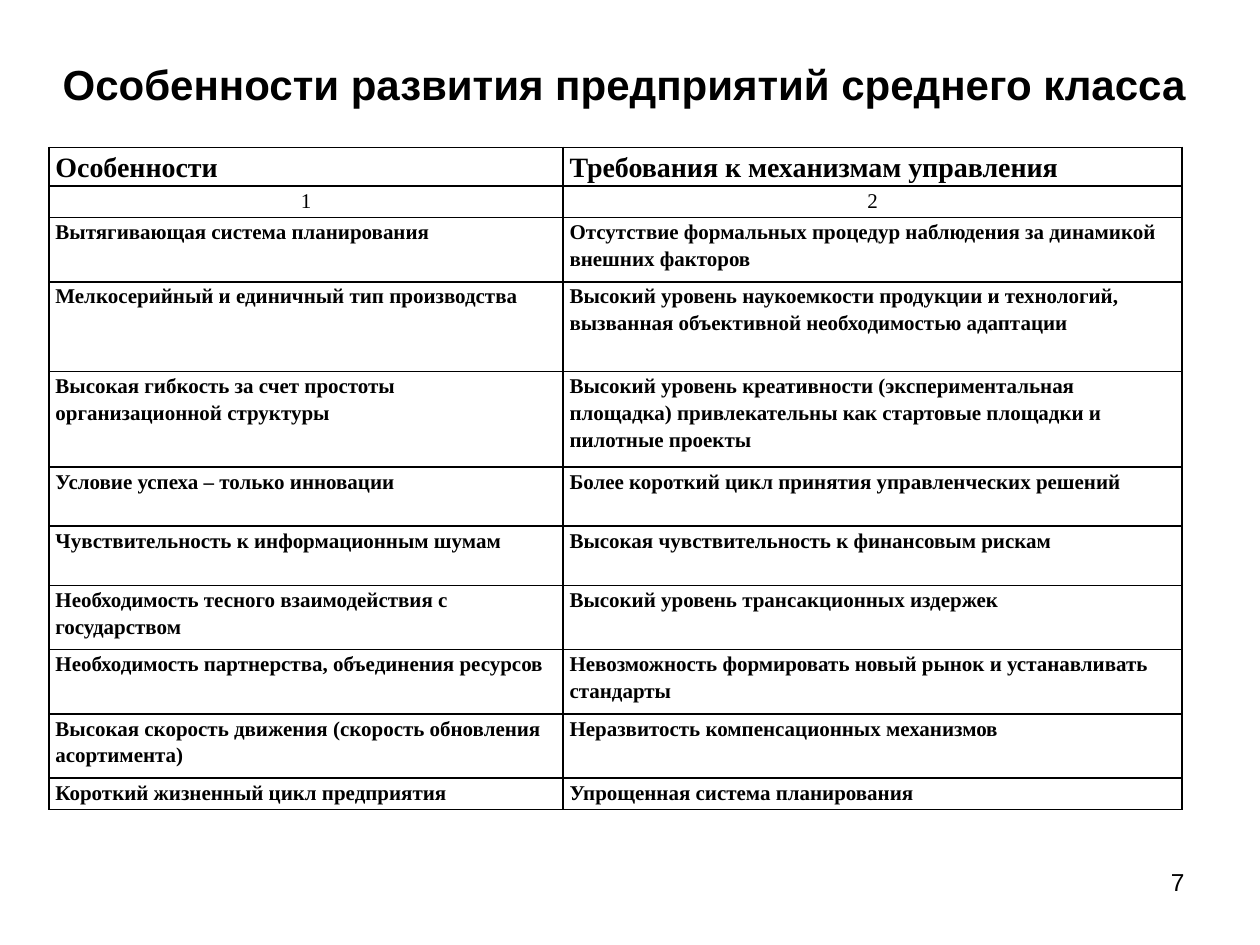
from lxml import etree
from pptx import Presentation
from pptx.dml.color import RGBColor
from pptx.enum.text import MSO_ANCHOR, PP_ALIGN
from pptx.oxml.ns import qn
from pptx.util import Inches, Pt

LEFT, CENTER, RIGHT = PP_ALIGN.LEFT, PP_ALIGN.CENTER, PP_ALIGN.RIGHT
TOP, MIDDLE = MSO_ANCHOR.TOP, MSO_ANCHOR.MIDDLE
TITLE_ONLY = 5

HEADING = "Особенности развития предприятий среднего класса"
COLUMN_WIDTHS = (4.08, 4.91)
# Row height, feature, requirement
ROWS = [
    (0.25, "Особенности", "Требования к механизмам управления"),
    (0.25, "1", "2"),
    (0.51, "Вытягивающая система планирования",
     "Отсутствие формальных процедур наблюдения за динамикой внешних факторов"),
    (0.71, "Мелкосерийный и единичный тип производства",
     "Высокий уровень наукоемкости продукции и технологий, "
     "вызванная объективной необходимостью адаптации"),
    (0.76, "Высокая гибкость за счет простоты организационной структуры",
     "Высокий уровень креативности (экспериментальная площадка) "
     "привлекательны как стартовые площадки и пилотные проекты"),
    (0.47, "Условие успеха – только инновации",
     "Более короткий цикл принятия управленческих решений"),
    (0.47, "Чувствительность к информационным шумам",
     "Высокая чувствительность к финансовым рискам"),
    (0.51, "Необходимость тесного взаимодействия с государством",
     "Высокий уровень трансакционных издержек"),
    (0.51, "Необходимость партнерства, объединения ресурсов",
     "Невозможность формировать новый рынок и устанавливать стандарты"),
    (0.51, "Высокая скорость движения (скорость обновления асортимента)",
     "Неразвитость компенсационных механизмов"),
    (0.25, "Короткий жизненный цикл предприятия",
     "Упрощенная система планирования"),
]


def rgb(value):
    return RGBColor.from_string(value)


class SlideBuilder:
    ink, paper = "000000", "FFFFFF"
    sans, serif = "Arial", "Times New Roman"
    border_width = Pt(1)

    def __init__(self, slide):
        self.slide = slide

    def set_text(self, frame, text, face, size, bold=False, align=LEFT):
        frame.word_wrap = True
        paragraph = frame.paragraphs[0]
        paragraph.text = text
        paragraph.alignment = align
        font = paragraph.font
        font.name, font.size, font.bold = face, Pt(size), bold
        font.color.rgb = rgb(self.ink)
        return paragraph

    def title(self, text, left, top, width, height):
        heading = self.slide.shapes.title
        heading.left, heading.top = Inches(left), Inches(top)
        heading.width, heading.height = Inches(width), Inches(height)
        heading.text_frame.vertical_anchor = MIDDLE
        self.set_text(heading.text_frame, text, self.sans, 24, True, CENTER)

    def page_number(self, text, left, top, width, height):
        number = self.slide.shapes.add_textbox(
            Inches(left), Inches(top), Inches(width), Inches(height))
        self.set_text(number.text_frame, text, self.sans, 14, align=RIGHT)

    def border(self, cell):
        properties = cell._tc.get_or_add_tcPr()
        for position, side in enumerate(("lnL", "lnR", "lnT", "lnB")):
            line = etree.Element(qn(f"a:{side}"), w=str(self.border_width))
            fill = etree.SubElement(line, qn("a:solidFill"))
            etree.SubElement(fill, qn("a:srgbClr"), val=self.ink)
            properties.insert(position, line)

    def cell(self, cell, text, size, bold, align):
        cell.margin_left = cell.margin_right = Inches(0.05)
        cell.margin_top = cell.margin_bottom = 0
        cell.vertical_anchor = TOP
        cell.fill.solid()
        cell.fill.fore_color.rgb = rgb(self.paper)
        self.border(cell)
        paragraph = self.set_text(
            cell.text_frame, text, self.serif, size, bold, align)
        paragraph.line_spacing = 1.15

    def table(self, rows, widths, left, top):
        height = sum(row[0] for row in rows)
        table = self.slide.shapes.add_table(
            len(rows), len(widths), Inches(left), Inches(top),
            Inches(sum(widths)), Inches(height)).table
        table.first_row = table.horz_banding = False
        for column, width in zip(table.columns, widths):
            column.width = Inches(width)
        for index, (row_height, *texts) in enumerate(rows):
            table.rows[index].height = Inches(row_height)
            numbering = index == 1
            for column, text in enumerate(texts):
                self.cell(table.cell(index, column), text,
                          size=16 if index == 0 else 12,
                          bold=not numbering,
                          align=CENTER if numbering else LEFT)


def main():
    deck = Presentation()
    deck.slide_width, deck.slide_height = Inches(10), Inches(7.5)
    builder = SlideBuilder(deck.slides.add_slide(deck.slide_layouts[TITLE_ONLY]))

    # Heading and page number
    builder.title(HEADING, 0.23, 0.39, 9.45, 0.55)
    builder.page_number("7", 7.17, 6.83, 2.33, 0.52)

    # Features and the requirements they place on management
    builder.table(ROWS, COLUMN_WIDTHS, 0.39, 1.17)

    deck.save("out.pptx")


if __name__ == "__main__":
    main()
